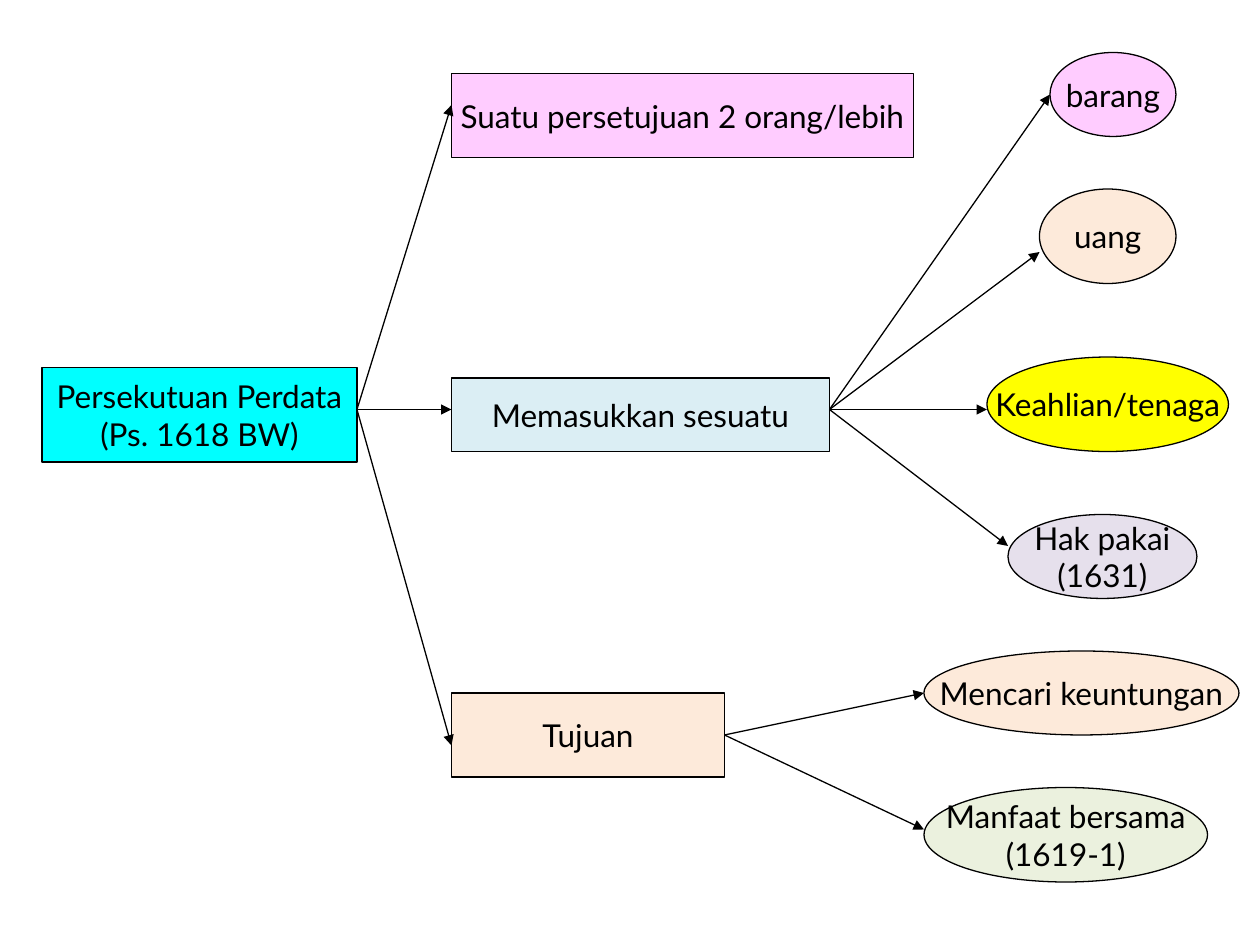
from dataclasses import dataclass

from lxml import etree
from pptx import Presentation
from pptx.dml.color import RGBColor
from pptx.enum.shapes import MSO_CONNECTOR, MSO_SHAPE
from pptx.enum.text import MSO_ANCHOR, PP_ALIGN
from pptx.oxml.ns import qn
from pptx.slide import Slide
from pptx.util import Emu, Pt

RECTANGLE = MSO_SHAPE.RECTANGLE
OVAL = MSO_SHAPE.OVAL
STRAIGHT = MSO_CONNECTOR.STRAIGHT
MIDDLE = MSO_ANCHOR.MIDDLE
CENTER = PP_ALIGN.CENTER

EMU_PER_PX = 9525
FONT = "Lato"
BLACK = "000000"
LINE_WIDTH = Pt(0.75)


@dataclass(frozen=True)
class Node:
    text: str
    left: int
    top: int
    width: int
    height: int
    fill: str
    arrow_in_y: int = 0
    arrow_out_y: int = 0
    children: tuple["Node", ...] = ()
    outline: MSO_SHAPE = RECTANGLE


def px(length: int) -> Emu:
    return Emu(length * EMU_PER_PX)


def color(hex_value: str) -> RGBColor:
    return RGBColor.from_string(hex_value)


def draw_node(slide: Slide, node: Node) -> None:
    shape = slide.shapes.add_shape(
        node.outline, px(node.left), px(node.top), px(node.width), px(node.height)
    )
    shape.shadow.inherit = False
    shape.fill.solid()
    shape.fill.fore_color.rgb = color(node.fill)
    shape.line.color.rgb = color(BLACK)
    shape.line.width = LINE_WIDTH
    frame = shape.text_frame
    frame.word_wrap = False
    frame.vertical_anchor = MIDDLE
    frame.text = node.text
    for paragraph in frame.paragraphs:
        paragraph.alignment = CENTER
        paragraph.font.name = FONT
        paragraph.font.size = Pt(18)
        paragraph.font.color.rgb = color(BLACK)


def draw_arrow(slide: Slide, parent: Node, child: Node) -> None:
    arrow = slide.shapes.add_connector(
        STRAIGHT,
        px(parent.left + parent.width),
        px(parent.arrow_out_y),
        px(child.left),
        px(child.arrow_in_y),
    )
    arrow.line.color.rgb = color(BLACK)
    arrow.line.width = LINE_WIDTH
    properties = arrow._element.spPr
    etree.SubElement(properties.find(qn("a:ln")), qn("a:tailEnd"), type="triangle")
    etree.SubElement(properties, qn("a:effectLst"))


def draw_tree(slide: Slide, node: Node) -> None:
    draw_node(slide, node)
    for child in node.children:
        draw_tree(slide, child)
        draw_arrow(slide, node, child)


AGREEMENT = Node("Suatu persetujuan 2 orang/lebih", 344, 56, 352, 64, "FFCCFF", 80)

CONTRIBUTION = Node(
    "Memasukkan sesuatu", 344, 288, 288, 56, "DBEEF4", 312, 312,
    (
        Node("barang", 800, 40, 96, 64, "FFCCFF", 72, outline=OVAL),
        Node("uang", 792, 144, 104, 72, "FDEADA", 192, outline=OVAL),
        Node("Keahlian/tenaga", 752, 272, 184, 72, "FFFF00", 312, outline=OVAL),
        Node("Hak pakai\n(1631)", 768, 392, 144, 64, "E6E0EC", 416, outline=OVAL),
    ),
)

PURPOSE = Node(
    "Tujuan", 344, 528, 208, 64, "FDEADA", 568, 560,
    (
        Node("Mencari keuntungan", 704, 496, 240, 64, "FDEADA", 528, outline=OVAL),
        Node("Manfaat bersama\n(1619-1)", 704, 600, 216, 72, "EBF1DE", 632, outline=OVAL),
    ),
)

PARTNERSHIP = Node(
    "Persekutuan Perdata\n(Ps. 1618 BW)", 32, 280, 240, 72, "00FFFF",
    arrow_out_y=312,
    children=(AGREEMENT, CONTRIBUTION, PURPOSE),
)


def main() -> None:
    presentation = Presentation()
    presentation.slide_width = px(960)
    presentation.slide_height = px(720)
    slide = presentation.slides.add_slide(presentation.slide_layouts[6])
    draw_tree(slide, PARTNERSHIP)
    presentation.save("out.pptx")


if __name__ == "__main__":
    main()
